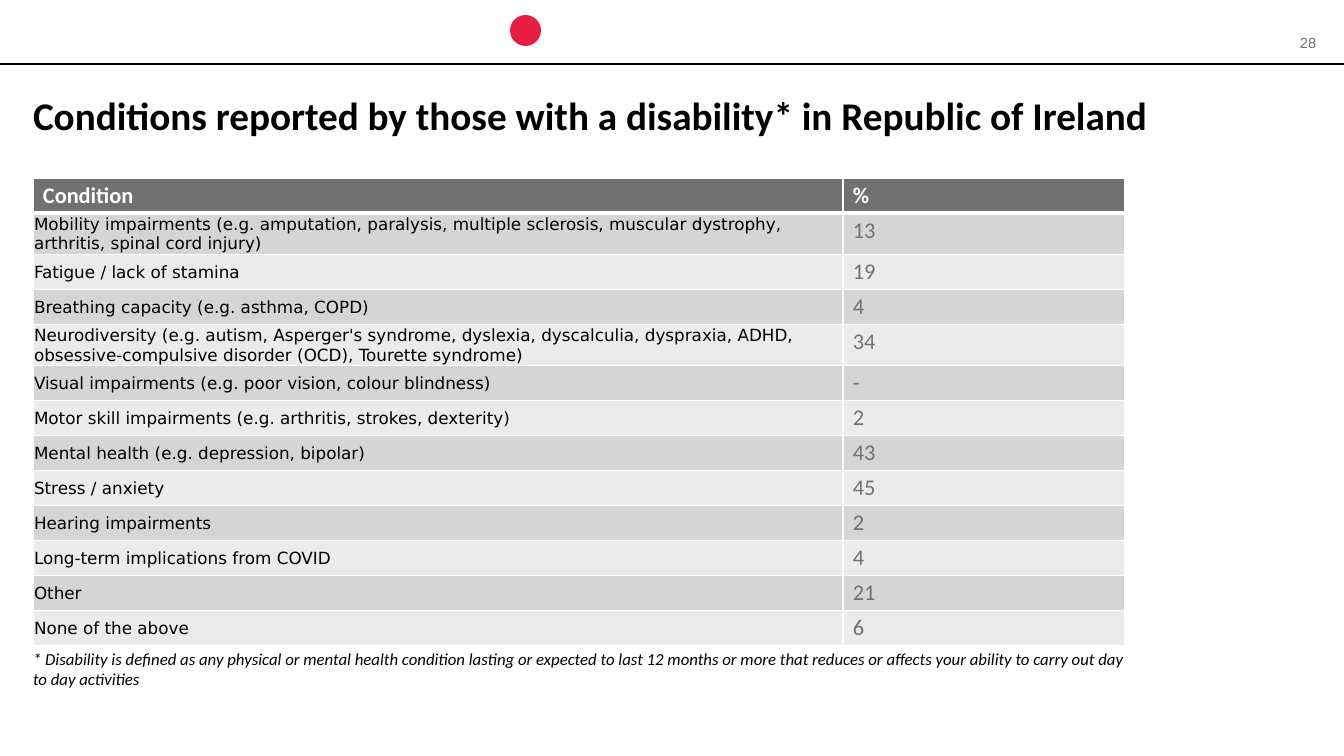
from lxml import etree
from pptx import Presentation
from pptx.dml.color import RGBColor
from pptx.enum.shapes import MSO_CONNECTOR, MSO_SHAPE
from pptx.enum.text import MSO_ANCHOR, MSO_AUTO_SIZE, PP_ALIGN
from pptx.oxml.ns import qn
from pptx.util import Emu, Pt

STRAIGHT, OVAL = MSO_CONNECTOR.STRAIGHT, MSO_SHAPE.OVAL
TOP, MIDDLE = MSO_ANCHOR.TOP, MSO_ANCHOR.MIDDLE
LEFT, NO_FIT = PP_ALIGN.LEFT, MSO_AUTO_SIZE.NONE

BLACK = RGBColor(0x00, 0x00, 0x00)
WHITE = RGBColor(0xFF, 0xFF, 0xFF)
RED = RGBColor(0xE5, 0x1E, 0x42)
GREY = RGBColor(0x71, 0x71, 0x71)
BANDS = (RGBColor(0xD5, 0xD5, 0xD5), RGBColor(0xEB, 0xEB, 0xEB))

SLIDE_W, SLIDE_H = 1344, 756
MARGIN = 33
COL_WIDTHS = (810, 282)
ROW_H, TWO_LINE_ROW_H = 35, 40
WRAP_CHARS = 90
LABEL_INSETS, VALUE_INSETS = (1, 1, 1, 0), (10, 4, 10, 4)

TITLE = "Conditions reported by those with a disability* in Republic of Ireland"
FOOTNOTE = ("* Disability is defined as any physical or mental health condition "
            "lasting or expected to last 12 months or more that reduces or affects "
            "your ability to carry out day to day activities")
CONDITIONS = [
    ("Mobility impairments (e.g. amputation, paralysis, multiple sclerosis, "
     "muscular dystrophy, arthritis, spinal cord injury)", "13"),
    ("Fatigue / lack of stamina", "19"),
    ("Breathing capacity (e.g. asthma, COPD)", "4"),
    ("Neurodiversity (e.g. autism, Asperger's syndrome, dyslexia, dyscalculia, "
     "dyspraxia, ADHD, obsessive-compulsive disorder (OCD), Tourette syndrome)", "34"),
    ("Visual impairments (e.g. poor vision, colour blindness)", "-"),
    ("Motor skill impairments (e.g. arthritis, strokes, dexterity)", "2"),
    ("Mental health (e.g. depression, bipolar)", "43"),
    ("Stress / anxiety", "45"),
    ("Hearing impairments", "2"),
    ("Long-term implications from COVID", "4"),
    ("Other", "21"),
    ("None of the above", "6"),
]


def px(n):
    return Emu(round(n * 914400 / 100.8))


def write(tf, text, size, color, font="Calibri", bold=False, italic=False):
    p = tf.paragraphs[0]
    p.text = text
    p.alignment = LEFT
    f = p.font
    f.name, f.size, f.bold, f.italic = font, Pt(size), bold, italic
    f.color.rgb = color


def set_insets(target, insets):
    (target.margin_left, target.margin_top,
     target.margin_right, target.margin_bottom) = map(px, insets)


def add_header_rule(s):
    rule = s.shapes.add_connector(STRAIGHT, 0, px(64), px(SLIDE_W), px(64))
    rule.line.color.rgb = BLACK
    rule.line.width = Pt(1.5)
    etree.SubElement(rule._element.spPr, qn("a:effectLst"))


def add_dot(s):
    dot = s.shapes.add_shape(OVAL, px(510), px(15), px(31), px(31))
    dot.shadow.inherit = False
    dot.fill.solid()
    dot.fill.fore_color.rgb = RED
    dot.line.fill.background()


def add_title(s):
    title = s.shapes.title
    title.left, title.top, title.width, title.height = map(px, (MARGIN, 91, 1277, 102))
    tf = title.text_frame
    tf.auto_size, tf.vertical_anchor, tf.word_wrap = NO_FIT, TOP, True
    set_insets(tf, (0, 0, 0, 0))
    write(tf, TITLE, 28, BLACK, bold=True)


def add_text(s, box, text, size, color, insets, **style):
    tf = s.shapes.add_textbox(*map(px, box)).text_frame
    tf.word_wrap = True
    set_insets(tf, insets)
    write(tf, text, size, color, **style)


def set_borders(cell, bottom_pt):
    tcPr = cell._tc.get_or_add_tcPr()
    for side, width in (("L", 1), ("R", 1), ("T", 1), ("B", bottom_pt)):
        ln = etree.SubElement(tcPr, qn(f"a:ln{side}"), w=str(Pt(width)))
        fill = etree.SubElement(ln, qn("a:solidFill"))
        etree.SubElement(fill, qn("a:srgbClr"), val=str(WHITE))


def fill_cell(cell, text, size, color, fill, insets, anchor=TOP, bottom_pt=1, **style):
    set_borders(cell, bottom_pt)
    cell.fill.solid()
    cell.fill.fore_color.rgb = fill
    cell.vertical_anchor = anchor
    set_insets(cell, insets)
    write(cell.text_frame, text, size, color, **style)


def add_conditions_table(s):
    heights = [ROW_H] + [TWO_LINE_ROW_H if len(label) > WRAP_CHARS else ROW_H
                         for label, _ in CONDITIONS]
    table = s.shapes.add_table(len(heights), len(COL_WIDTHS), px(MARGIN), px(178),
                               px(sum(COL_WIDTHS)), px(sum(heights))).table
    table.horz_banding = False
    for col, width in zip(table.columns, COL_WIDTHS):
        col.width = px(width)
    for row, height in zip(table.rows, heights):
        row.height = px(height)
    for c, heading in enumerate(("Condition", "%")):
        fill_cell(table.cell(0, c), heading, 16, WHITE, GREY, VALUE_INSETS,
                  bottom_pt=3, bold=True)
    for r, (label, value) in enumerate(CONDITIONS, start=1):
        band = BANDS[(r - 1) % 2]
        fill_cell(table.cell(r, 0), label, 12, BLACK, band, LABEL_INSETS,
                  anchor=MIDDLE, font="DejaVu Sans")
        fill_cell(table.cell(r, 1), value, 16, GREY, band, VALUE_INSETS)
    # The heavier rule under the heading is shared with the first row
    for cell in table.rows[1].cells:
        cell._tc.tcPr.find(qn("a:lnT")).set("w", str(Pt(3)))


def main():
    prs = Presentation()
    prs.slide_width, prs.slide_height = px(SLIDE_W), px(SLIDE_H)
    s = prs.slides.add_slide(prs.slide_layouts[5])

    # Header band
    add_header_rule(s)
    add_dot(s)
    add_text(s, (1290, 29, 54, 22), "28", 10.5, GREY, (10, 5, 10, 5), font="Arial")

    # Title, table and footnote
    add_title(s)
    add_conditions_table(s)
    add_text(s, (MARGIN, 649, 1106, 102), FOOTNOTE, 12, BLACK, (0, 0, 0, 0), italic=True)

    prs.save("out.pptx")


if __name__ == "__main__":
    main()
